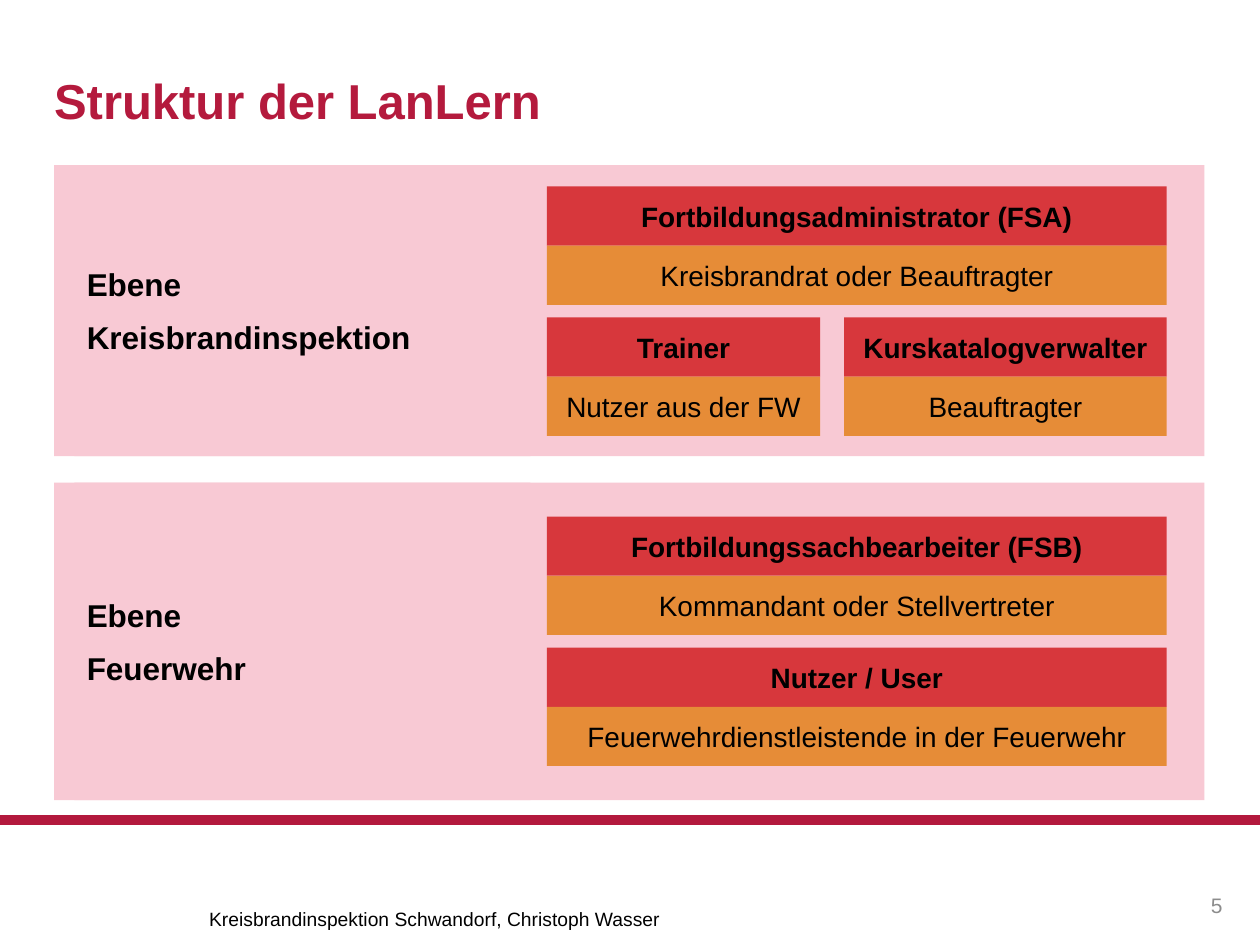
"""Builds a slide showing the roles at each level of a learning platform."""
import pptx
import pptx.dml.color
import pptx.enum.shapes
import pptx.enum.text
import pptx.oxml
import pptx.oxml.ns
import pptx.util

Inches = pptx.util.Inches
Pt = pptx.util.Pt
RGBColor = pptx.dml.color.RGBColor
Align = pptx.enum.text.PP_ALIGN
Anchor = pptx.enum.text.MSO_ANCHOR

BLACK = RGBColor(0x00, 0x00, 0x00)
GREY = RGBColor(0x8C, 0x8C, 0x8C)
TITLE_RED = RGBColor(0xB4, 0x1A, 0x3D)
LINE_RED = RGBColor(0xB3, 0x19, 0x3D)
PINK = RGBColor(0xF8, 0xC9, 0xD4)
RED = RGBColor(0xD7, 0x37, 0x3C)
ORANGE = RGBColor(0xE6, 0x8C, 0x37)

FONT = "Arial"
BAND_LEFT, BAND_WIDTH = 0.43, 9.13
LABEL_LEFT, LABEL_WIDTH = 0.59, 3.62
ROLE_LEFT, ROLE_WIDTH = 4.34, 4.92
ROW_HEIGHT, ROLE_STEP = 0.47, 1.04
TRAINER_WIDTH, CATALOGUE_LEFT, CATALOGUE_WIDTH = 2.17, 6.7, 2.56

LEVELS = [
    (1.31, 2.31, 1.48, ["Ebene", "Kreisbrandinspektion"], [
        (0, ROLE_LEFT, ROLE_WIDTH, "Fortbildungsadministrator (FSA)", "Kreisbrandrat oder Beauftragter"),
        (1, ROLE_LEFT, TRAINER_WIDTH, "Trainer", "Nutzer aus der FW"),
        (1, CATALOGUE_LEFT, CATALOGUE_WIDTH, "Kurskatalogverwalter", "Beauftragter"),
    ]),
    (3.83, 2.52, 4.1, ["Ebene", "Feuerwehr"], [
        (0, ROLE_LEFT, ROLE_WIDTH, "Fortbildungssachbearbeiter (FSB)", "Kommandant oder Stellvertreter"),
        (1, ROLE_LEFT, ROLE_WIDTH, "Nutzer / User", "Feuerwehrdienstleistende in der Feuerwehr"),
    ]),
]


class SlideBuilder:
    def __init__(self, slide):
        self.slide = slide

    def add_lines(self, shape, lines, size, color=BLACK, bold=False, align=Align.LEFT, anchor=Anchor.MIDDLE):
        frame = shape.text_frame
        frame.word_wrap = True
        frame.vertical_anchor = anchor
        for index, line in enumerate(lines):
            paragraph = frame.add_paragraph() if index else frame.paragraphs[0]
            paragraph.alignment = align
            if index:
                paragraph.space_before = Pt(size / 2)
            run = paragraph.add_run()
            run.text = line
            run.font.name = FONT
            run.font.size = Pt(size)
            run.font.bold = bold
            run.font.color.rgb = color

    def label(self, left, top, width, height, line, size, inset=True, **style):
        shape = self.slide.shapes.add_textbox(Inches(left), Inches(top), Inches(width), Inches(height))
        self.add_lines(shape, [line], size, **style)
        if not inset:
            frame = shape.text_frame
            frame.margin_left = frame.margin_right = frame.margin_top = frame.margin_bottom = 0

    def box(self, shapes, left, top, width, height, fill):
        shape = shapes.add_shape(pptx.enum.shapes.MSO_SHAPE.RECTANGLE,
                                 Inches(left), Inches(top), Inches(width), Inches(height))
        shape.shadow.inherit = False
        shape.fill.solid()
        shape.fill.fore_color.rgb = fill
        shape.line.fill.background()
        return shape

    def role(self, shapes, left, top, width, name, holder):
        for row, (line, fill) in enumerate([(name, RED), (holder, ORANGE)]):
            shape = self.box(shapes, left, top + row * ROW_HEIGHT, width, ROW_HEIGHT, fill)
            self.add_lines(shape, [line], 16, bold=row == 0, align=Align.CENTER)

    def level(self, top, height, role_top, heading, roles):
        self.box(self.slide.shapes, BAND_LEFT, top, BAND_WIDTH, height, PINK)
        shape = self.box(self.slide.shapes, LABEL_LEFT, top, LABEL_WIDTH, height, PINK)
        self.add_lines(shape, heading, 18, bold=True)
        group = self.slide.shapes.add_group_shape()
        for step, left, width, name, holder in roles:
            self.role(group.shapes, left, role_top + step * ROLE_STEP, width, name, holder)

    def rule(self, top, width, color):
        line = self.slide.shapes.add_connector(pptx.enum.shapes.MSO_CONNECTOR.STRAIGHT,
                                               Inches(0), Inches(top), Inches(10), Inches(top))
        line.line.color.rgb = color
        line.line.width = Pt(width)
        properties = line.element.find(pptx.oxml.ns.qn("p:spPr"))
        properties.append(pptx.oxml.parse_xml(f'<a:effectLst {pptx.oxml.ns.nsdecls("a")}/>'))


def main():
    presentation = pptx.Presentation()
    presentation.slide_width, presentation.slide_height = Inches(10), Inches(7.5)
    builder = SlideBuilder(presentation.slides.add_slide(presentation.slide_layouts[6]))
    builder.label(1.66, 7.19, 5.35, 0.19, "Kreisbrandinspektion Schwandorf, Christoph Wasser", 11,
                  inset=False, anchor=Anchor.BOTTOM)
    builder.rule(6.51, 6, LINE_RED)
    builder.label(BAND_LEFT, 0.56, BAND_WIDTH, 0.47, "Struktur der LanLern", 28,
                  inset=False, color=TITLE_RED, bold=True, anchor=Anchor.BOTTOM)
    builder.label(9.19, 6.98, 0.61, 0.4, "5", 12, color=GREY, align=Align.RIGHT)
    for level in LEVELS:
        builder.level(*level)
    presentation.save("out.pptx")


if __name__ == "__main__":
    main()
